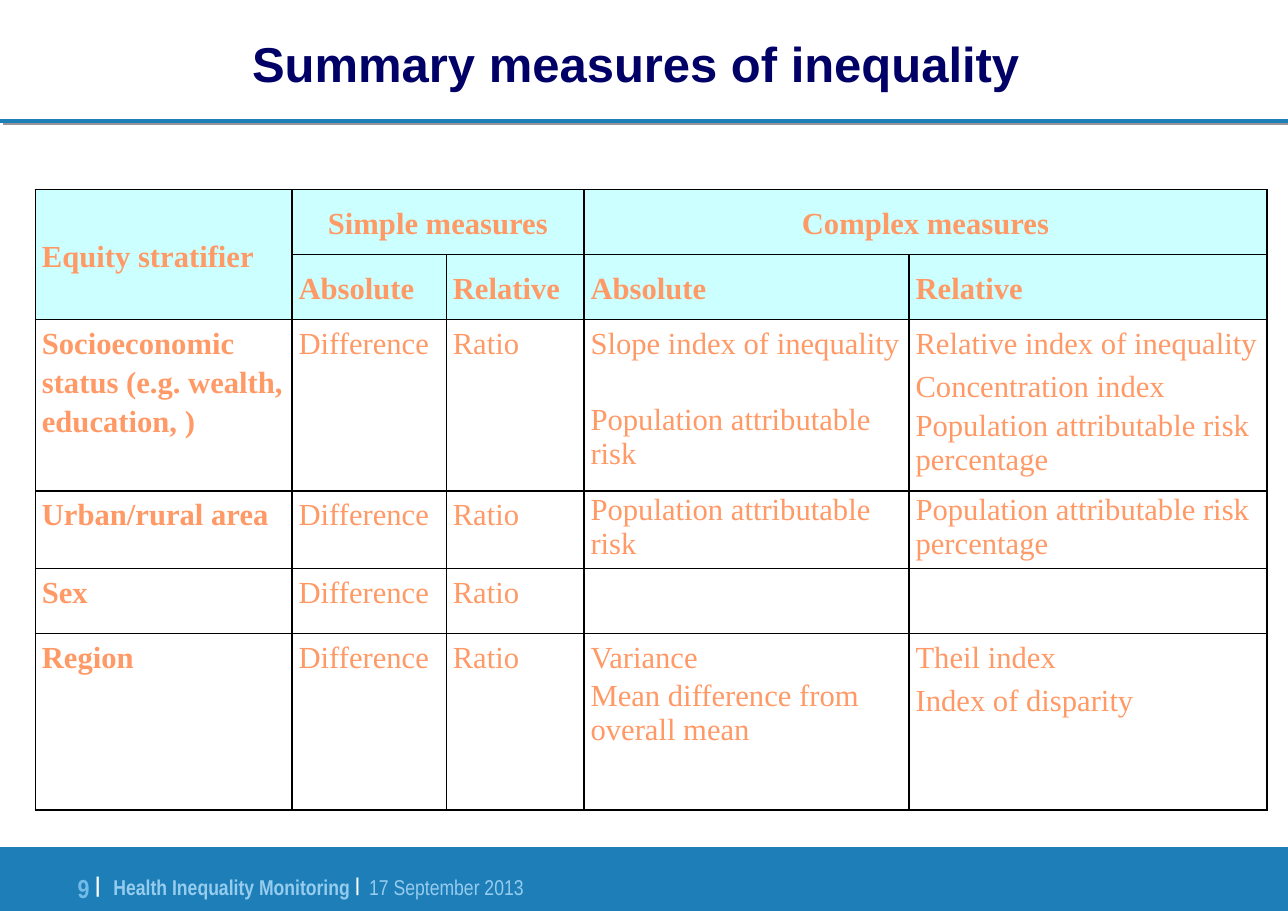
from pptx import Presentation
from pptx.dml.color import RGBColor
from pptx.enum.shapes import MSO_CONNECTOR, MSO_SHAPE
from pptx.enum.text import MSO_ANCHOR, PP_ALIGN
from pptx.oxml import parse_xml
from pptx.oxml.ns import nsdecls, qn
from pptx.util import Inches, Pt

LINE, RECT = MSO_CONNECTOR.STRAIGHT, MSO_SHAPE.RECTANGLE
TOP, MIDDLE = MSO_ANCHOR.TOP, MSO_ANCHOR.MIDDLE
LEFT, CENTER, RIGHT = PP_ALIGN.LEFT, PP_ALIGN.CENTER, PP_ALIGN.RIGHT
WIDE, HIGH = 11.69, 8.27
BLUE, PALE, WHITE = "1E7FB8", "96CCEE", "FFFFFF"

RISK = "Population attributable risk"
SHARE = "Population attributable risk percentage"
MEAN = "Mean difference from overall mean"
TIGHT = (RISK, SHARE, MEAN)

COLS = [2.33, 1.4, 1.25, 2.95, 3.25]
ROWS = [0.59, 0.59, 1.44, 0.66, 0.59, 1.6]
CELLS = [
    ["Equity stratifier", "Simple measures", "", "Complex measures", ""],
    ["", "Absolute", "Relative", "Absolute", "Relative"],
    ["Socioeconomic status (e.g. wealth, education, )", "Difference", "Ratio",
     "Slope index of inequality\n" + RISK,
     "Relative index of inequality\nConcentration index\n" + SHARE],
    ["Urban/rural area", "Difference", "Ratio", RISK, SHARE],
    ["Sex", "Difference", "Ratio", "", ""],
    ["Region", "Difference", "Ratio", "Variance\n" + MEAN,
     "Theil index\nIndex of disparity"],
]
SPANS = [(0, 0, 1, 0), (0, 1, 0, 2), (0, 3, 0, 4)]


def color(code):
    return RGBColor.from_string(code)


def shadow(code, dist, angle):
    """Effect list with one hard shadow; dist in points, angle in degrees."""
    return parse_xml(
        f'<a:effectLst {nsdecls("a")}><a:outerShdw blurRad="0" '
        f'dist="{Pt(dist)}" dir="{angle * 60000}"><a:srgbClr val="{code}"/>'
        '</a:outerShdw></a:effectLst>')


def border(side):
    return parse_xml(
        f'<a:{side} {nsdecls("a")} w="{Pt(1)}"><a:solidFill>'
        f'<a:srgbClr val="000000"/></a:solidFill></a:{side}>')


class Page:
    def __init__(self, slide):
        self.slide = slide
        self.face, self.size, self.ink = "Times New Roman", 20, "FF9966"
        self.head = "CCFFFF"

    def rule(self, y):
        line = self.slide.shapes.add_connector(
            LINE, 0, Inches(y), Inches(WIDE), Inches(y))
        line.line.color.rgb = color(BLUE)
        line.line.width = Pt(3)
        line._element.spPr.append(shadow("969696", 2.2, 27))

    def band(self, y, high):
        bar = self.slide.shapes.add_shape(
            RECT, 0, Inches(y), Inches(WIDE), Inches(high))
        bar.shadow.inherit = False
        bar.fill.solid()
        bar.fill.fore_color.rgb = color(BLUE)
        bar.line.fill.background()

    def style(self, run, face, size, ink, bold):
        font = run.font
        font.name, font.size, font.bold = face, Pt(size), bold
        font.color.rgb = color(ink)

    def text(self, spot, runs, face, align=LEFT, anchor=TOP, tab=None):
        """Runs are (text, size, colour, bold, baseline in percent)."""
        box = self.slide.shapes.add_textbox(*map(Inches, spot))
        frame = box.text_frame
        frame.word_wrap = True
        frame.vertical_anchor = anchor
        frame.margin_left = frame.margin_right = 0
        frame.margin_top = frame.margin_bottom = 0
        para = frame.paragraphs[0]
        para.alignment = align
        if tab:
            para._p.get_or_add_pPr().append(parse_xml(
                f'<a:tabLst {nsdecls("a")}><a:tab pos="{Inches(tab)}" '
                'algn="l"/></a:tabLst>'))
        for words, size, ink, bold, base in runs:
            run = para.add_run()
            run.text = words
            self.style(run, face, size, ink, bold)
            if base:
                run._r.get_or_add_rPr().set("baseline", str(base * 1000))
        return para

    def title(self, words):
        para = self.text((0, 0, 11.55, 1.14), [(words, 32, "000066", True, 0)],
                         "Arial", CENTER, MIDDLE)
        props = para.runs[0]._r.get_or_add_rPr()
        props.find(qn("a:solidFill")).addnext(shadow("B9DDF3", 2, 45))

    def cell(self, cell, words, head, bold, align):
        cell.margin_left = cell.margin_right = Inches(0.06)
        cell.margin_top = cell.margin_bottom = Inches(0.02)
        cell.vertical_anchor = MIDDLE if head else TOP
        if head:
            cell.fill.solid()
            cell.fill.fore_color.rgb = color(self.head)
        else:
            cell.fill.background()
        props = cell._tc.get_or_add_tcPr()
        for spot, side in enumerate(("lnL", "lnR", "lnT", "lnB")):
            props.insert(spot, border(side))
        cell.text_frame.text = words
        for para in cell.text_frame.paragraphs:
            para.alignment = align
            para.line_spacing = 1.0 if para.text in TIGHT else 1.15
            para.space_after = Pt(3)
            for run in para.runs:
                self.style(run, self.face, self.size, self.ink, bold)

    def table(self, x, y):
        grid = self.slide.shapes.add_table(
            len(ROWS), len(COLS), Inches(x), Inches(y),
            Inches(sum(COLS)), Inches(sum(ROWS))).table
        grid.first_row = grid.horz_banding = False
        for col, wide in zip(grid.columns, COLS):
            col.width = Inches(wide)
        for row, high in zip(grid.rows, ROWS):
            row.height = Inches(high)
        for r, row in enumerate(CELLS):
            for c, words in enumerate(row):
                align = CENTER if r == 0 and c else LEFT
                self.cell(grid.cell(r, c), words, r < 2, r < 2 or c == 0, align)
        for top, left, low, right in SPANS:
            grid.cell(top, left).merge(grid.cell(low, right))
        return grid


def main():
    deck = Presentation()
    deck.slide_width, deck.slide_height = Inches(WIDE), Inches(HIGH)
    page = Page(deck.slides.add_slide(deck.slide_layouts[6]))
    page.rule(1.1)
    page.band(7.69, 0.58)
    page.text((1.03, 7.84, 4.21, 0.28), [
        ("Health Inequality Monitoring ", 14, PALE, True, 0),
        ("|", 21, WHITE, True, 12),
        ("\t17 September 2013", 14, PALE, False, 0),
    ], "Arial Narrow", tab=2.32)
    page.text((0.46, 7.82, 0.45, 0.4), [
        ("9 ", 17, "72BBE8", True, 0),
        ("|", 24, WHITE, True, 14),
    ], "Arial Narrow", RIGHT)
    page.title("Summary measures of inequality")
    grid = page.table(0.32, 1.72)
    grid.cell(2, 3).text_frame.paragraphs[1].space_before = Pt(25)
    deck.save("out.pptx")


if __name__ == "__main__":
    main()
